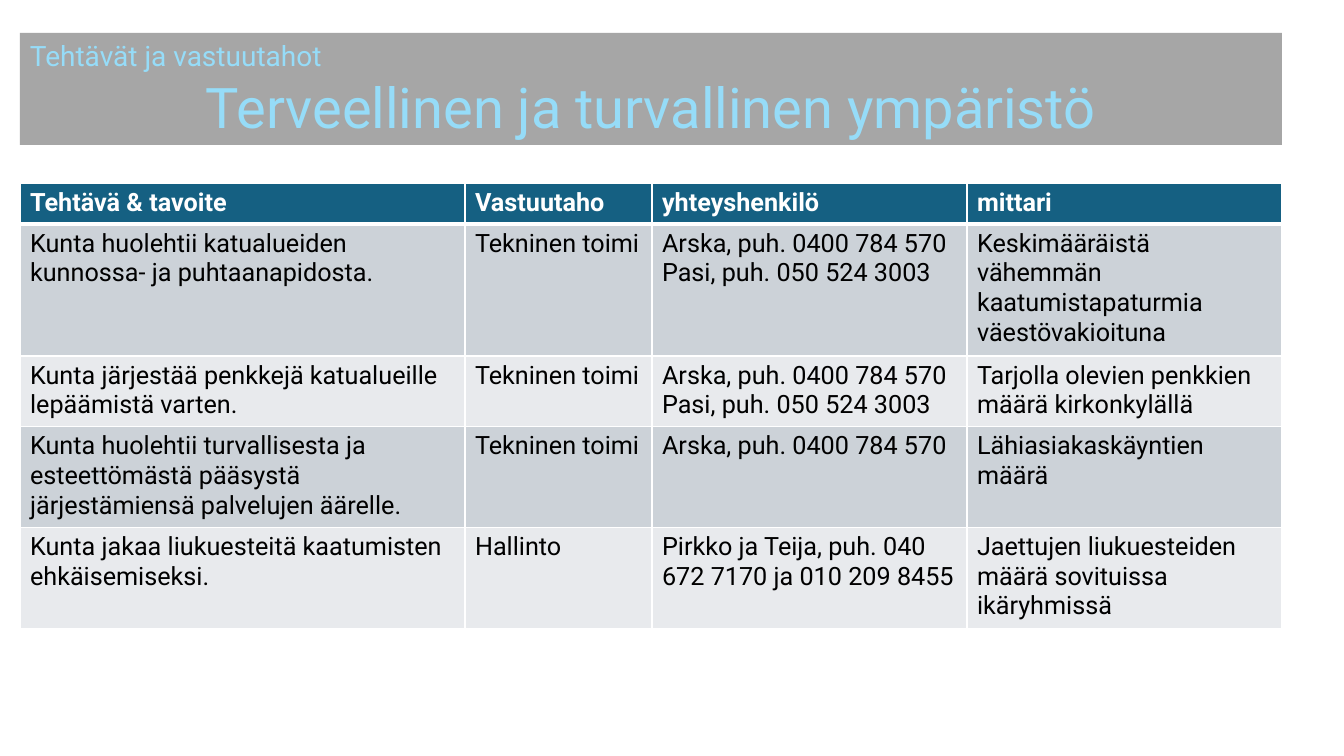
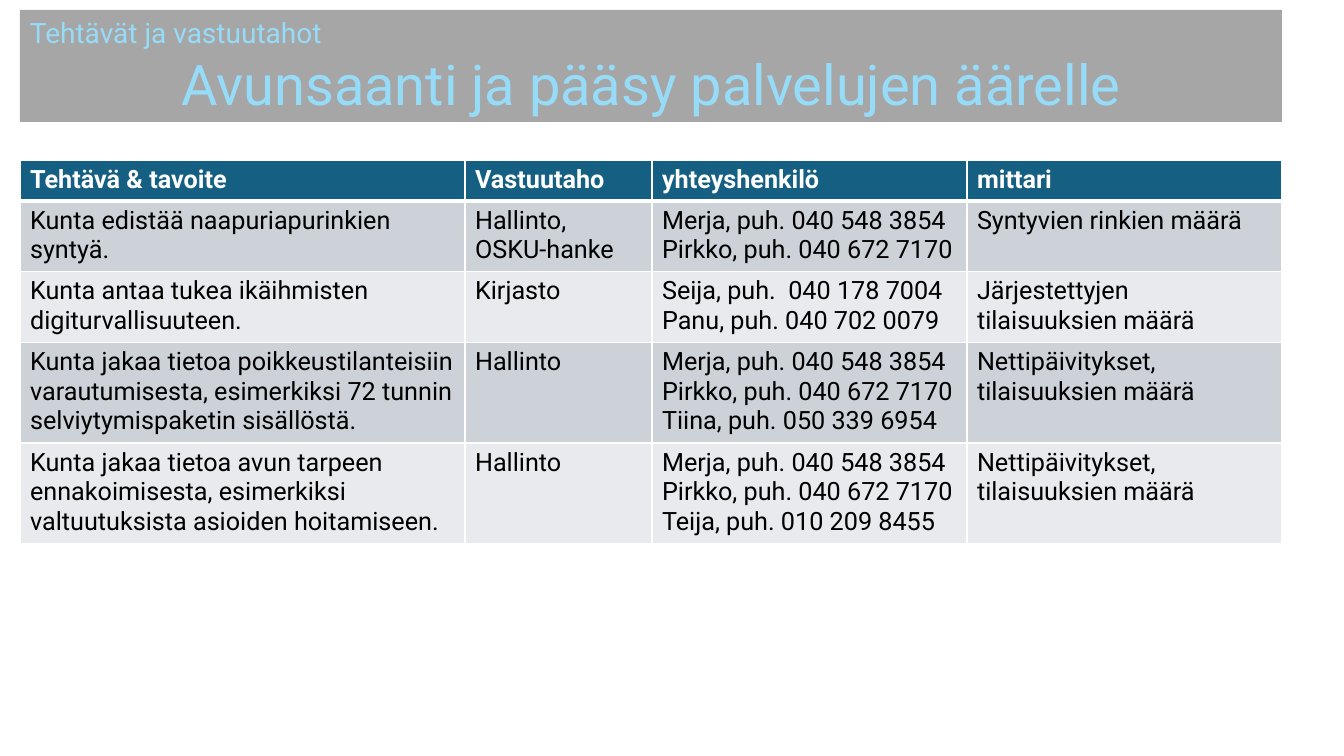
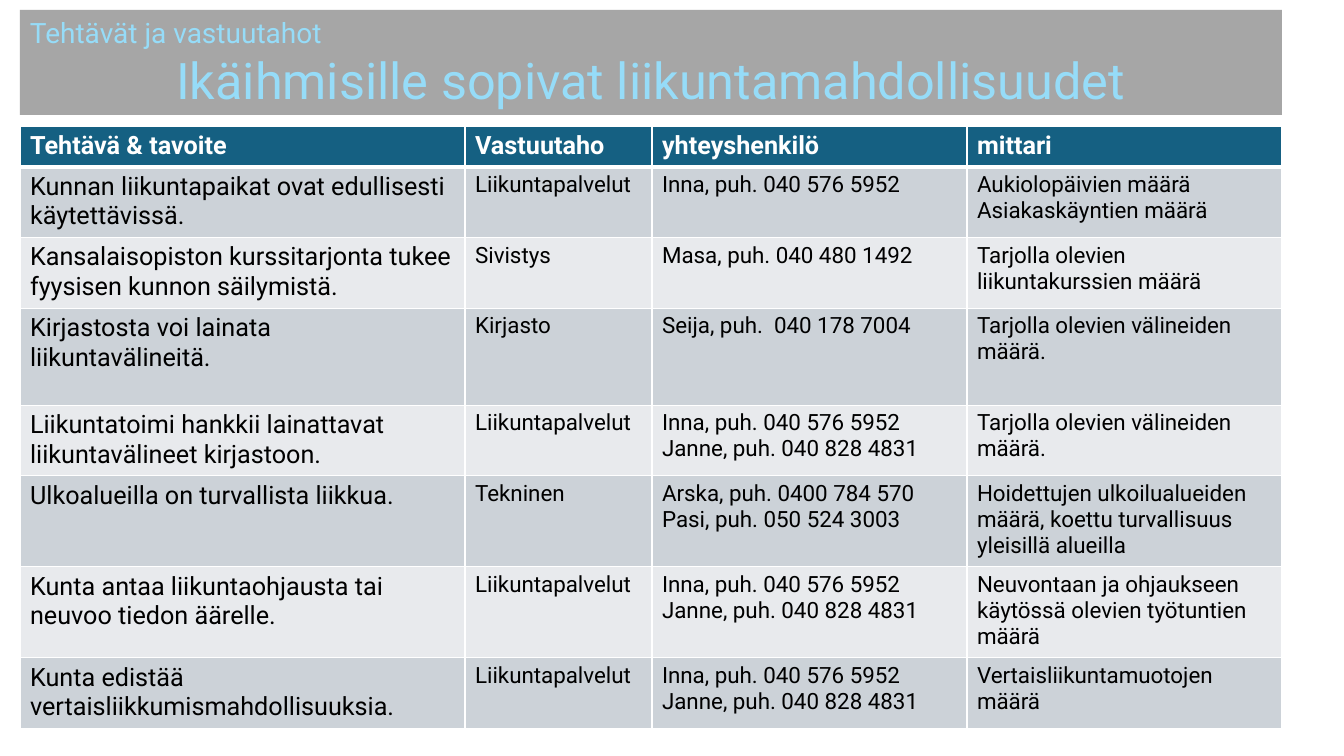
"""Build three slides of tasks and responsible parties, each a title band over a table."""
from pptx import Presentation, util as u
from pptx.dml.color import RGBColor
from pptx.enum import shapes, text
from pptx.oxml import parse_xml
from pptx.oxml.ns import nsdecls

PX = 914400 / 100.8
FONT = "Roboto"
HUES = {"band": "A6A6A6", "title": "96DCF8", "head": "156082", "odd": "CCD2D8",
        "even": "E8EAED", "edge": "FFFFFF", "white": "FFFFFF", "ink": "000000"}
LEFT, WIDTH = 20, 1262
COLS = [445, 187, 315, 315]
HEAD = ["Tehtävä & tavoite", "Vastuutaho", "yhteyshenkilö", "mittari"]

ARSKA = "Arska, puh. 0400 784 570"
PAIR = ARSKA + "\nPasi, puh. 050 524 3003"
MERJA = "Merja, puh. 040 548 3854\nPirkko, puh. 040 672 7170"
SEIJA = "Seija, puh.  040 178 7004"
INNA = "Inna, puh. 040 576 5952"
COACH = INNA + "\nJanne, puh. 040 828 4831"
SPORT = "Liikuntapalvelut"
TECH = "Tekninen toimi"
NET = "Nettipäivitykset, tilaisuuksien määrä"
GEAR = "Tarjolla olevien välineiden määrä."

PAGES = [
    {"title": "Terveellinen ja turvallinen ympäristö", "size": 40, "side": 18,
     "top": 33, "tall": 112, "grid": 183, "rows": [
        (132, "Kunta huolehtii katualueiden kunnossa- ja puhtaanapidosta.", TECH, PAIR,
         "Keskimääräistä vähemmän kaatumistapaturmia väestövakioituna"),
        (70, "Kunta järjestää penkkejä katualueille lepäämistä varten.", TECH, PAIR,
         "Tarjolla olevien penkkien määrä kirkonkylällä"),
        (100, "Kunta huolehtii turvallisesta ja esteettömästä pääsystä järjestämiensä "
         "palvelujen äärelle.", TECH, ARSKA, "Lähiasiakaskäyntien määrä"),
        (100, "Kunta jakaa liukuesteitä kaatumisten ehkäisemiseksi.", "Hallinto",
         "Pirkko ja Teija, puh. 040 672 7170 ja 010 209 8455",
         "Jaettujen liukuesteiden määrä sovituissa ikäryhmissä"),
     ]},
    {"title": "Avunsaanti ja pääsy palvelujen äärelle", "size": 40, "side": 18,
     "top": 10, "tall": 112, "grid": 160, "rows": [
        (70, "Kunta edistää naapuriapurinkien syntyä.", "Hallinto,\nOSKU-hanke", MERJA,
         "Syntyvien rinkien määrä"),
        (70, "Kunta antaa tukea ikäihmisten digiturvallisuuteen.", "Kirjasto",
         SEIJA + "\nPanu, puh. 040 702 0079", "Järjestettyjen tilaisuuksien määrä"),
        (100, "Kunta jakaa tietoa poikkeustilanteisiin varautumisesta, esimerkiksi "
         "72 tunnin selviytymispaketin sisällöstä.", "Hallinto",
         MERJA + "\nTiina, puh. 050 339 6954", NET),
        (100, "Kunta jakaa tietoa avun tarpeen ennakoimisesta, esimerkiksi "
         "valtuutuksista asioiden hoitamiseen.", "Hallinto",
         MERJA + "\nTeija, puh. 010 209 8455", NET),
     ]},
    {"title": "Ikäihmisille sopivat liikuntamahdollisuudet", "size": 36, "side": 16,
     "top": 10, "tall": 105, "grid": 126, "rows": [
        (70, "Kunnan liikuntapaikat ovat edullisesti käytettävissä.", SPORT, INNA,
         "Aukiolopäivien määrä\nAsiakaskäyntien määrä"),
        (70, "Kansalaisopiston kurssitarjonta tukee fyysisen kunnon säilymistä.",
         "Sivistys", "Masa, puh. 040 480 1492",
         "Tarjolla olevien liikuntakurssien määrä"),
        (97, "Kirjastosta voi lainata liikuntavälineitä.", "Kirjasto", SEIJA, GEAR),
        (70, "Liikuntatoimi hankkii lainattavat liikuntavälineet kirjastoon.", SPORT,
         COACH, GEAR),
        (91, "Ulkoalueilla on turvallista liikkua.", "Tekninen", PAIR,
         "Hoidettujen ulkoilualueiden määrä, koettu turvallisuus yleisillä alueilla"),
        (91, "Kunta antaa liikuntaohjausta tai neuvoo tiedon äärelle.", SPORT, COACH,
         "Neuvontaan ja ohjaukseen käytössä olevien työtuntien määrä"),
        (70, "Kunta edistää vertaisliikkumismahdollisuuksia.", SPORT, COACH,
         "Vertaisliikuntamuotojen määrä"),
     ]},
]


def px(*vals):
    """Turn px lengths into EMU."""
    return [u.Emu(round(val * PX)) for val in vals]


def style(para, size, hue, bold=False):
    """Set the font of a paragraph."""
    font = para.font
    font.name, font.size, font.bold = FONT, u.Pt(size), bold
    font.color.rgb = RGBColor.from_string(HUES[hue])


deck = Presentation()
deck.slide_width, deck.slide_height = px(1344, 756)

for page in PAGES:
    slide = deck.slides.add_slide(deck.slide_layouts[6])
    band = slide.shapes.add_shape(shapes.MSO_SHAPE.RECTANGLE,
                                  *px(LEFT, page["top"], WIDTH, page["tall"]))
    band.shadow.inherit = False
    band.fill.solid()
    band.fill.fore_color.rgb = RGBColor.from_string(HUES["band"])
    band.line.fill.background()
    frame = band.text_frame
    frame.word_wrap = True
    frame.auto_size = text.MSO_AUTO_SIZE.SHAPE_TO_FIT_TEXT
    frame.text = "Tehtävät ja vastuutahot\n" + page["title"]
    for para, size, align in zip(frame.paragraphs, (20, page["size"]),
                                 (text.PP_ALIGN.LEFT, text.PP_ALIGN.CENTER)):
        para.alignment = align
        style(para, size, "title")

    rows = [(41, *HEAD)] + page["rows"]
    tall = sum(row[0] for row in rows)
    table = slide.shapes.add_table(len(rows), len(COLS),
                                   *px(LEFT, page["grid"], WIDTH, tall)).table
    table.horz_banding = False
    for col, wide in zip(table.columns, px(*COLS)):
        col.width = wide
    for r, (high, *words) in enumerate(rows):
        table.rows[r].height = px(high)[0]
        for c, word in enumerate(words):
            cell = table.cell(r, c)
            props = cell._tc.get_or_add_tcPr()
            for side in "LRTB":
                thick = 3 if (r, side) in ((0, "B"), (1, "T")) else 1
                props.append(parse_xml(
                    f'<a:ln{side} {nsdecls("a")} w="{u.Pt(thick)}"><a:solidFill>'
                    f'<a:srgbClr val="{HUES["edge"]}"/></a:solidFill></a:ln{side}>'))
            cell.fill.solid()
            fill = "head" if r == 0 else "odd" if r % 2 else "even"
            cell.fill.fore_color.rgb = RGBColor.from_string(HUES[fill])
            cell.text = word
            size = page["side"] if r and c else 18
            for para in cell.text_frame.paragraphs:
                style(para, size, "ink" if r else "white", r == 0)

deck.save("out.pptx")
